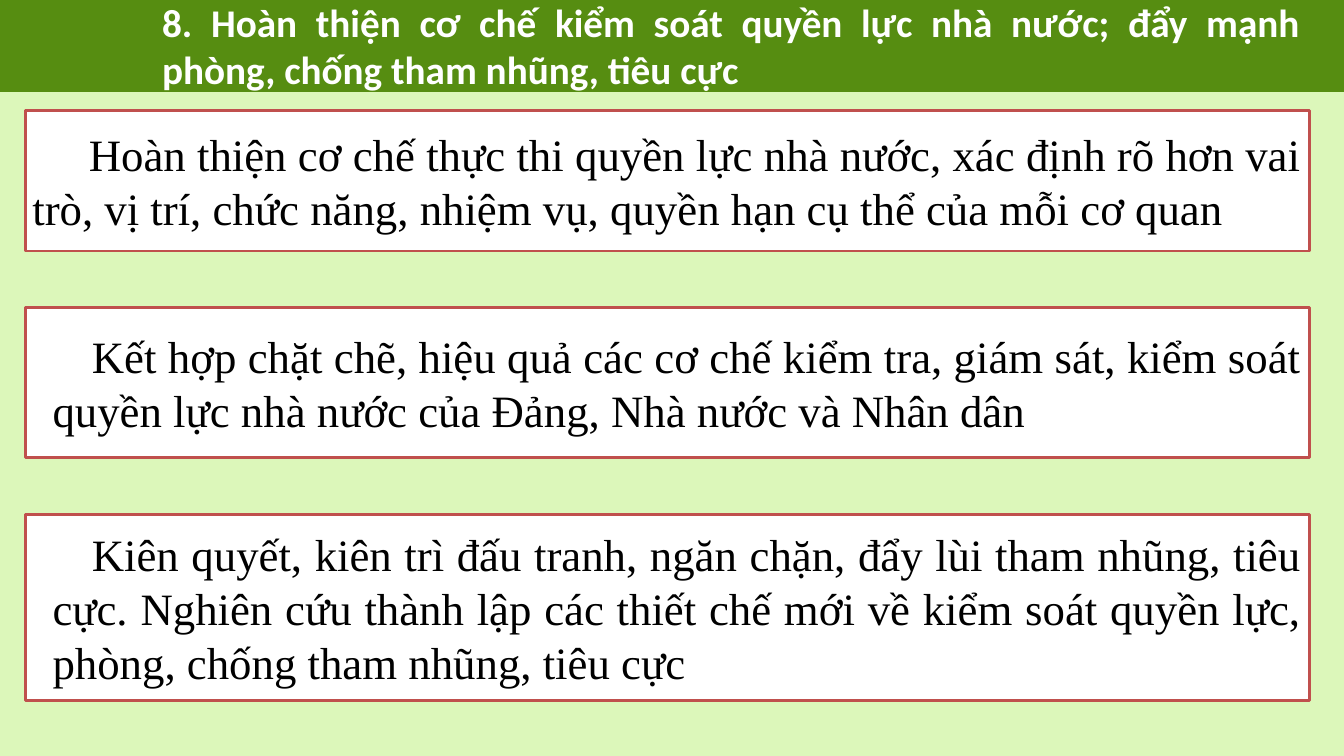
from dataclasses import dataclass

from lxml import etree
from pptx import Presentation
from pptx import util as u
from pptx.dml.color import RGBColor
from pptx.enum import shapes, text

GREEN = RGBColor(0x56, 0x8D, 0x11)
PALE_GREEN = RGBColor(0xDC, 0xF7, 0xBA)
RED = RGBColor(0xC0, 0x50, 0x4D)
WHITE = RGBColor(0xFF, 0xFF, 0xFF)
BLACK = RGBColor(0, 0, 0)

SLIDE_WIDTH, SLIDE_HEIGHT = u.Inches(13.333), u.Inches(7.5)

# Shares of the slide's size, in percent
PANEL_LEFT, PANEL_WIDTH = 1.88, 95.55
FIRST_PANEL_TOP, PANEL_GAP = 14.67, 7.47


@dataclass(frozen=True)
class Area:
    left: float
    top: float
    width: float
    height: float

    def box(self) -> tuple[int, int, int, int]:
        """Turn percentages into slide lengths."""
        return (round(SLIDE_WIDTH * self.left / 100),
                round(SLIDE_HEIGHT * self.top / 100),
                round(SLIDE_WIDTH * self.width / 100),
                round(SLIDE_HEIGHT * self.height / 100))


@dataclass(frozen=True)
class Style:
    font: str
    size: float
    color: RGBColor
    bold: bool = False


@dataclass(frozen=True)
class Panel:
    wording: str
    height: float
    margin: float
    first_line: float


TITLE_STYLE = Style("Calibri", 28, WHITE, True)
BODY_STYLE = Style("Times New Roman", 32, BLACK)

TITLE = ("8. Hoàn thiện cơ chế kiểm soát quyền lực nhà nước; "
         "đẩy mạnh phòng, chống tham nhũng, tiêu cực")
PANELS = [
    Panel("Hoàn thiện cơ chế thực thi quyền lực nhà nước, xác định rõ hơn vai trò, "
          "vị trí, chức năng, nhiệm vụ, quyền hạn cụ thể của mỗi cơ quan",
          18.53, 0, 0.56),
    Panel("Kết hợp chặt chẽ, hiệu quả các cơ chế kiểm tra, giám sát, kiểm soát "
          "quyền lực nhà nước của Đảng, Nhà nước và Nhân dân",
          19.87, 0.2, 0.39),
    Panel("Kiên quyết, kiên trì đấu tranh, ngăn chặn, đẩy lùi tham nhũng, tiêu cực. "
          "Nghiên cứu thành lập các thiết chế mới về kiểm soát quyền lực, "
          "phòng, chống tham nhũng, tiêu cực",
          24.67, 0.2, 0.39),
]


def add_rectangle(slide, area: Area, fill: RGBColor, line: RGBColor, width: float):
    shape = slide.shapes.add_shape(shapes.MSO_SHAPE.RECTANGLE, *area.box())
    shape.shadow.inherit = False
    shape.fill.solid()
    shape.fill.fore_color.rgb = fill
    shape.line.color.rgb = line
    shape.line.width = u.Pt(width)
    return shape


def write(frame, wording: str, style: Style, margin: float, first_line: float) -> None:
    """Write one justified paragraph; indents are in inches."""
    frame.word_wrap = True
    paragraph = frame.paragraphs[0]
    paragraph.alignment = text.PP_ALIGN.JUSTIFY
    properties: etree._Element = paragraph._p.get_or_add_pPr()
    properties.set("marL", str(u.Inches(margin)))
    properties.set("indent", str(u.Inches(first_line)))
    run = paragraph.add_run()
    run.text = wording
    run.font.name = style.font
    run.font.size = u.Pt(style.size)
    run.font.bold = style.bold
    run.font.color.rgb = style.color


def add_title(slide) -> None:
    shape = slide.shapes.add_textbox(*Area(10.95, -0.93, 86.48, 13.87).box())
    write(shape.text_frame, TITLE, TITLE_STYLE, 0.05, 0)
    shape.text_frame.auto_size = text.MSO_AUTO_SIZE.SHAPE_TO_FIT_TEXT


def add_panel(slide, panel: Panel, top: float) -> None:
    area = Area(PANEL_LEFT, top, PANEL_WIDTH, panel.height)
    frame = add_rectangle(slide, area, WHITE, RED, 2).text_frame
    frame.margin_left = frame.margin_right = u.Inches(0.07)
    frame.margin_top = frame.margin_bottom = u.Inches(0.04)
    frame.vertical_anchor = text.MSO_ANCHOR.MIDDLE
    write(frame, panel.wording, BODY_STYLE, panel.margin, panel.first_line)


def main() -> None:
    presentation = Presentation()
    presentation.slide_width = SLIDE_WIDTH
    presentation.slide_height = SLIDE_HEIGHT
    slide = presentation.slides.add_slide(presentation.slide_layouts[6])

    # Green header over a pale body
    slide.background.fill.solid()
    slide.background.fill.fore_color.rgb = GREEN
    add_rectangle(slide, Area(0, 12.27, 100, 87.73), PALE_GREEN, PALE_GREEN, 1.25)
    add_title(slide)

    # Panels stacked with equal gaps
    top = FIRST_PANEL_TOP
    for panel in PANELS:
        add_panel(slide, panel, top)
        top += panel.height + PANEL_GAP

    presentation.save("out.pptx")


if __name__ == "__main__":
    main()
